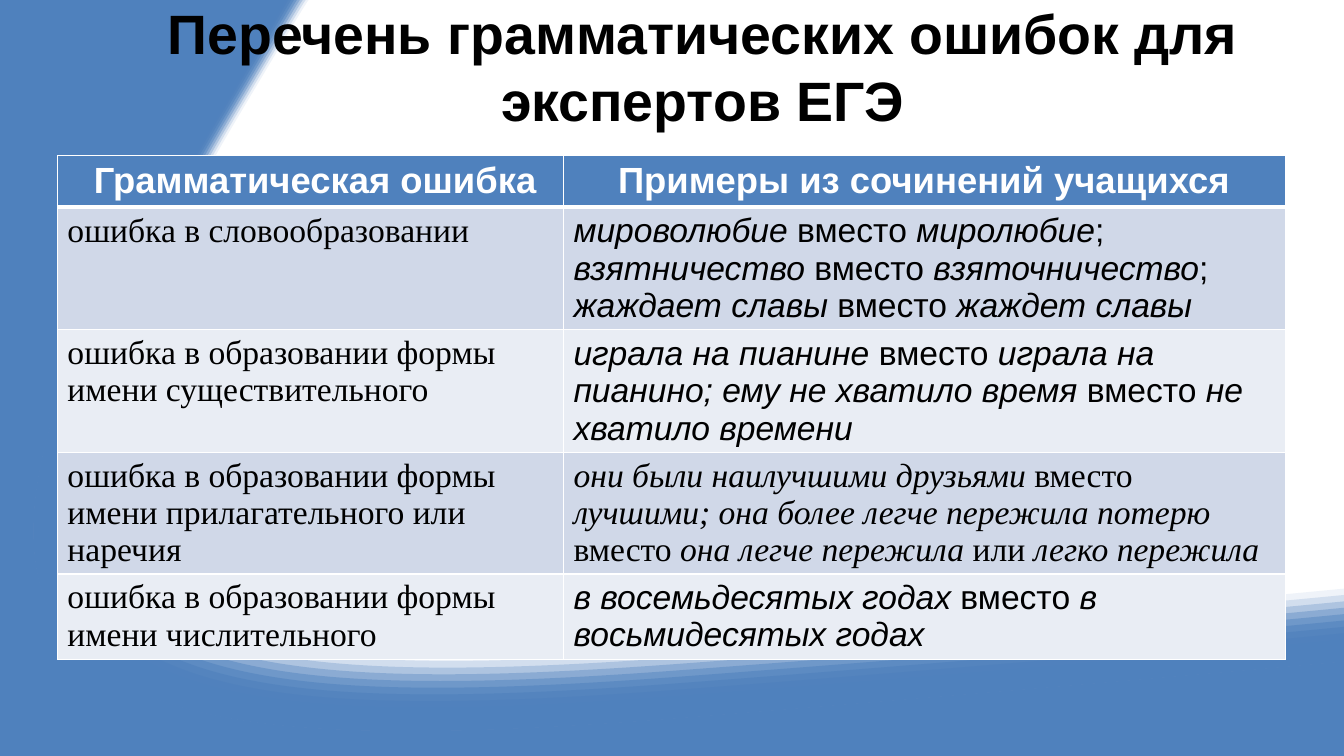
from lxml.etree import SubElement
from pptx import Presentation
from pptx.dml.color import RGBColor
from pptx.enum.text import MSO_ANCHOR, PP_ALIGN
from pptx.oxml import parse_xml
from pptx.oxml.ns import nsdecls, qn
from pptx.util import Pt

COLORS = {"blue": "4F81BD", "dark_row": "D0D8E8", "light_row": "E9EDF4",
          "white": "FFFFFF", "black": "000000"}
SANS, SERIF = "Arial", "Times New Roman"


def add_step(outline, tag, points):
    """Append one drawing command with its points to a freeform outline."""
    step = SubElement(outline, qn(f"a:{tag}"))
    for x, y in points:
        pt = SubElement(step, qn("a:pt"))
        pt.set("x", str(Pt(x)))
        pt.set("y", str(Pt(y)))


def add_run(p, text, size, font, color, **style):
    r = p.add_run()
    r.text = text
    r.font.color.rgb = RGBColor.from_string(COLORS[color])
    for name, value in {"size": Pt(size), "name": font, **style}.items():
        setattr(r.font, name, value)


prs = Presentation()
prs.slide_width, prs.slide_height = Pt(960), Pt(540)
s = prs.slides.add_slide(prs.slide_layouts[5])

# Blue wave: a solid body and eleven bands that fade towards the white field
corners = [(960, 540), (0, 540), (0, 0)]
wave_edge = [(191, 0), (191, 0), (173, 29.5), (141, 83), (-116.5, 512.5),
             (76.5, 543.5), (471.5, 514), (756, 491), (960, 472.5), (960, 472.5)]
band_far = [(960, 420.5), (958.5, 420.5), (781, 438.5), (497, 459.5), (116, 488),
            (-52.5, 455), (173, 78.5), (202.5, 29), (219.5, 0.5), (220.5, 0)]
band_near = [(960, 466), (935.5, 468.5), (754.5, 486), (478, 507), (88, 536.5),
             (-102, 506), (152, 82), (178.5, 37.5), (195, 8), (199.5, 0)]
bands = 11
pieces = [(corners, [], 1)]
for i in range(bands):
    t = i / (bands - 1)
    inner = [[a + (b - a) * t for a, b in zip(far, near)]
             for far, near in zip(band_far, band_near)]
    pieces.append((inner[:1], inner[1:], (i + 1) / bands))

for straight, curved, opacity in pieces:
    builder = s.shapes.build_freeform(0, 0, scale=Pt(1))
    builder.add_line_segments(corners)
    sp = builder.convert_to_shape()
    sp.shadow.inherit = False
    sp.fill.solid()
    sp.fill.fore_color.rgb = RGBColor.from_string(COLORS["blue"])
    sp.line.fill.background()
    if opacity < 1:
        clr = next(sp.element.spPr.iter(qn("a:srgbClr")))
        SubElement(clr, qn("a:alpha")).set("val", str(round(opacity * 100) * 1000))
    # The slide-sized outline gets true curves in place of its straight sides
    outline = next(sp.element.iter(qn("a:path")))
    outline.set("w", str(Pt(960)))
    outline.set("h", str(Pt(540)))
    for step in list(outline):
        outline.remove(step)
    add_step(outline, "moveTo", wave_edge[:1])
    for k in range(1, len(wave_edge), 3):
        add_step(outline, "cubicBezTo", wave_edge[k:k + 3])
    for point in straight:
        add_step(outline, "lnTo", [point])
    for k in range(0, len(curved), 3):
        add_step(outline, "cubicBezTo", curved[k:k + 3])
    add_step(outline, "close", [])

# Title, brought in front of the wave
title = s.shapes.title
title.element.getparent().append(title.element)
title.left, title.top, title.width, title.height = Pt(108.5), Pt(2), Pt(787), Pt(90)
tf = title.text_frame
tf.word_wrap = True
tf.vertical_anchor = MSO_ANCHOR.MIDDLE
p = tf.paragraphs[0]
p.alignment = PP_ALIGN.CENTER
p.line_spacing = Pt(48)
add_run(p, "Перечень грамматических ошибок для экспертов ЕГЭ", 39.6, SANS, "black", bold=True)

# Each error: its name, the font of its examples, and example paragraphs
# whose parts alternate between italic and upright
headers = [" Грамматическая ошибка", "Примеры из сочинений учащихся"]
errors = [
    ("ошибка в словообразовании", SANS,
     [["мироволюбие", " вместо ", "миролюбие", "; ", "взятничество", " вместо ",
       "взяточничество", ";"],
      ["жаждает славы", " вместо ", "жаждет славы"]]),
    ("ошибка в образовании формы имени существительного", SANS,
     [["играла на пианине", " вместо ", "играла на пианино; ему не хватило время ",
       "вместо", " не хватило времени"]]),
    ("ошибка в образовании формы имени прилагательного или наречия", SERIF,
     [["они были наилучшими друзьями", " вместо ",
       "лучшими; она более легче пережила потерю ", "вместо", " она легче пережила ",
       "или", " легко пережила"]]),
    ("ошибка в образовании формы имени числительного", SANS,
     [["в восемьдесятых годах", " вместо ", "в восьмидесятых годах"]]),
]
row_heights = [37, 87, 87, 87, 61]
table = s.shapes.add_table(len(row_heights), 2, Pt(41), Pt(111), Pt(877),
                           Pt(sum(row_heights))).table
for column, width in zip(table.columns, (361.5, 515.5)):
    column.width = Pt(width)
for row, height in zip(table.rows, row_heights):
    row.height = Pt(height)

for cell, text in zip(table.rows[0].cells, headers):
    p = cell.text_frame.paragraphs[0]
    p.alignment = PP_ALIGN.CENTER
    add_run(p, text, 26, SANS, "white", bold=True)

for i, (error, font, examples) in enumerate(errors, 1):
    add_run(table.cell(i, 0).text_frame.paragraphs[0], error, 24, SERIF, "black")
    tf = table.cell(i, 1).text_frame
    for k, parts in enumerate(examples):
        p = tf.add_paragraph() if k else tf.paragraphs[0]
        for n, part in enumerate(parts):
            add_run(p, part, 24, font, "black", italic=n % 2 == 0)

for i, row in enumerate(table.rows):
    fill = "blue" if i == 0 else "dark_row" if i % 2 else "light_row"
    widths = {"lnL": 1, "lnR": 1, "lnT": 3 if i == 1 else 1, "lnB": 3 if i == 0 else 1}
    for cell in row.cells:
        cell.fill.solid()
        cell.fill.fore_color.rgb = RGBColor.from_string(COLORS[fill])
        tcPr = cell._tc.get_or_add_tcPr()
        for k, (side, width) in enumerate(widths.items()):
            tcPr.insert(k, parse_xml(
                f'<a:{side} {nsdecls("a")} w="{Pt(width)}"><a:solidFill>'
                f'<a:srgbClr val="{COLORS["white"]}"/></a:solidFill></a:{side}>'))

prs.save("out.pptx")
